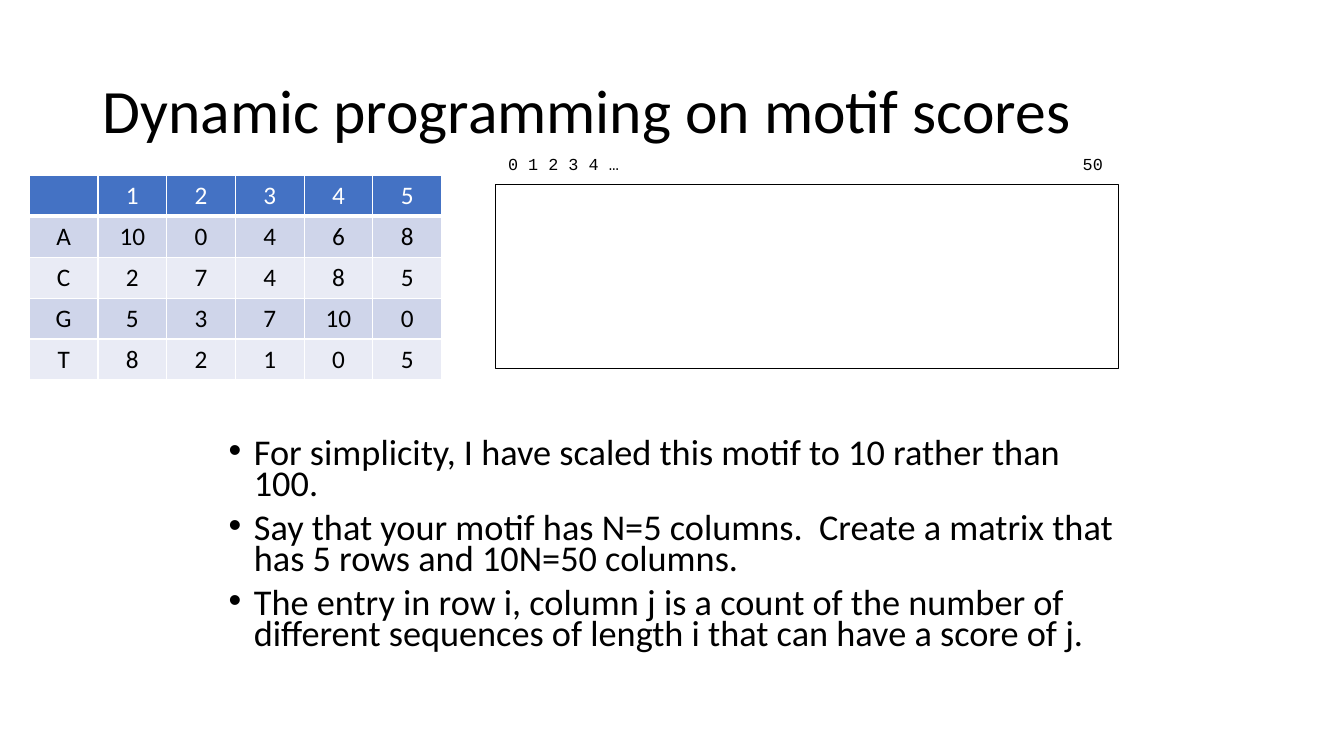
from lxml.etree import SubElement
from pptx import Presentation
from pptx.dml.color import RGBColor
from pptx.enum.shapes import MSO_SHAPE
from pptx.enum.text import MSO_ANCHOR, PP_ALIGN
from pptx.oxml.ns import qn
from pptx.util import Inches, Pt

WIDTH, HEIGHT = Inches(13.33), Inches(7.5)
COLORS = {"ink": "000000", "paper": "FFFFFF", "header": "4472C4",
          "odd": "CFD5EA", "even": "E9EBF5"}
SANS, MONO = "Calibri", "Courier New"

MOTIF = [
    ["", "1", "2", "3", "4", "5"],
    ["A", "10", "0", "4", "6", "8"],
    ["C", "2", "7", "4", "8", "5"],
    ["G", "5", "3", "7", "10", "0"],
    ["T", "8", "2", "1", "0", "5"],
]
STEPS = [
    "For simplicity, I have scaled this motif to 10 rather than 100.",
    "Say that your motif has N=5 columns.  Create a matrix that has 5 rows and 10N=50 columns.",
    "The entry in row i, column j is a count of the number of different sequences "
    "of length i that can have a score of j.",
]


def color(name):
    return RGBColor.from_string(COLORS[name])


def area(left, top, width, height):
    """Turn percentages of the slide into lengths."""
    return [round(share * side / 100) for share, side in
            zip((left, top, width, height), (WIDTH, HEIGHT) * 2)]


def set_format(target, values):
    for attribute, value in values.items():
        setattr(target, attribute, value)


def style_font(paragraph, size, face=SANS, ink="ink"):
    set_format(paragraph.font, {"size": Pt(size), "name": face, "bold": False})
    paragraph.font.color.rgb = color(ink)


def add_text(slide, place, lines, size, face=SANS, wrap=True,
             anchor=MSO_ANCHOR.TOP, spacing=1.0, gap=0, bullet=False, tab=None):
    """Add one paragraph per line; tab is the position of a right-aligned stop."""
    frame = slide.shapes.add_textbox(*place).text_frame
    set_format(frame, {"word_wrap": wrap, "vertical_anchor": anchor})
    for index, line in enumerate(lines):
        paragraph = frame.add_paragraph() if index else frame.paragraphs[0]
        paragraph.text = line
        set_format(paragraph, {"line_spacing": spacing,
                               "space_before": Pt(gap if index else 0)})
        properties = paragraph._p.get_or_add_pPr()
        if bullet:
            properties.set("marL", str(Inches(0.25)))
            properties.set("indent", str(Inches(-0.25)))
            SubElement(properties, qn("a:buFont"), typeface="Arial")
            SubElement(properties, qn("a:buChar"), char="•")
        if tab:
            stops = SubElement(properties, qn("a:tabLst"))
            SubElement(stops, qn("a:tab"), pos=str(tab), algn="r")
        style_font(paragraph, size, face)


def add_borders(cell, bottom):
    properties = cell._tc.get_or_add_tcPr()
    for edge, points in {"lnL": 1, "lnR": 1, "lnT": 1, "lnB": bottom}.items():
        line = SubElement(properties, qn(f"a:{edge}"), w=str(Pt(points)))
        fill = SubElement(line, qn("a:solidFill"))
        SubElement(fill, qn("a:srgbClr"), val=COLORS["paper"])


def add_motif_table(slide, place, rows):
    table = slide.shapes.add_table(len(rows), len(rows[0]), *place).table
    for row, scores in enumerate(rows):
        band = "header" if row == 0 else "odd" if row % 2 else "even"
        for column, score in enumerate(scores):
            cell = table.cell(row, column)
            add_borders(cell, bottom=1 if row else 3)
            cell.fill.solid()
            cell.fill.fore_color.rgb = color(band)
            cell.text = score
            paragraph = cell.text_frame.paragraphs[0]
            paragraph.alignment = PP_ALIGN.CENTER
            style_font(paragraph, 18, ink="ink" if row else "paper")


def add_matrix_outline(slide, place):
    matrix = slide.shapes.add_shape(MSO_SHAPE.RECTANGLE, *place)
    matrix.shadow.inherit = False
    matrix.fill.background()
    matrix.line.color.rgb = color("ink")
    matrix.line.width = Pt(0.75)


def main():
    deck = Presentation()
    set_format(deck, {"slide_width": WIDTH, "slide_height": HEIGHT})
    slide = deck.slides.add_slide(deck.slide_layouts[6])
    add_text(slide, area(6.9, 5.33, 86.25, 19.33),
             ["Dynamic programming on motif scores"], 44,
             anchor=MSO_ANCHOR.MIDDLE, spacing=0.9)
    add_text(slide, area(16.28, 57.73, 67.5, 31.6), STEPS, 25.9,
             spacing=0.7, gap=10, bullet=True)
    add_matrix_outline(slide, area(36.9, 24.4, 46.3, 24.4))
    add_text(slide, area(37.06, 19.73, 46.06, 4), ["0 1 2 3 4 …\t50"], 12,
             face=MONO, tab=Inches(5.9))
    add_motif_table(slide, area(2.18, 23.2, 30.68, 27.07), MOTIF)
    deck.save("out.pptx")


if __name__ == "__main__":
    main()
